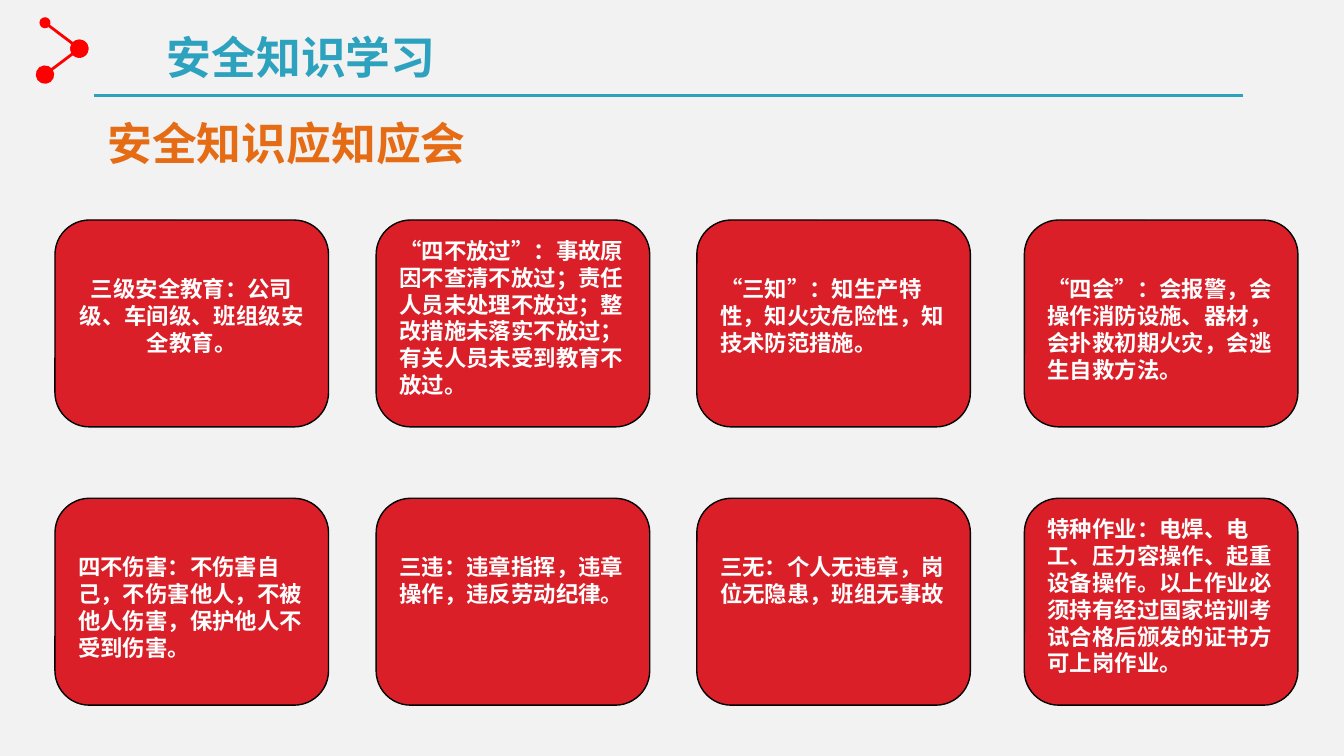
from dataclasses import dataclass

from lxml import etree
from pptx import Presentation
from pptx.dml.color import RGBColor
from pptx.enum.lang import MSO_LANGUAGE_ID
from pptx.enum.shapes import MSO_CONNECTOR, MSO_SHAPE
from pptx.enum.text import MSO_ANCHOR, PP_ALIGN
from pptx.oxml.ns import qn
from pptx.util import Cm, Pt

STRAIGHT = MSO_CONNECTOR.STRAIGHT
ROUNDED = MSO_SHAPE.ROUNDED_RECTANGLE
TOP, MIDDLE = MSO_ANCHOR.TOP, MSO_ANCHOR.MIDDLE
LEFT, CENTER, RIGHT = PP_ALIGN.LEFT, PP_ALIGN.CENTER, PP_ALIGN.RIGHT
CHINESE = MSO_LANGUAGE_ID.SIMPLIFIED_CHINESE


@dataclass(frozen=True)
class Theme:
    font: str = "Times New Roman"
    background: RGBColor = RGBColor(0xF2, 0xF2, 0xF2)
    teal: RGBColor = RGBColor(0x2D, 0xA2, 0xBF)
    orange: RGBColor = RGBColor(0xE5, 0x6B, 0x15)
    mark: RGBColor = RGBColor(0xFF, 0x00, 0x00)
    card: RGBColor = RGBColor(0xDA, 0x1F, 0x28)
    outline: RGBColor = RGBColor(0x00, 0x00, 0x00)
    card_text: RGBColor = RGBColor(0xFF, 0xFF, 0xFF)
    heading_size: Pt = Pt(24)
    card_size: Pt = Pt(12)
    rule_width: Pt = Pt(1.5)
    outline_width: Pt = Pt(0.75)


theme = Theme()


def write_text(shape, text, size, color, alignment, anchor):
    frame = shape.text_frame
    frame.word_wrap = True
    frame.vertical_anchor = anchor
    frame.text = text
    para = frame.paragraphs[0]
    para.alignment = alignment
    para._p.get_or_add_pPr().set("hangingPunct", "0")
    font = para.runs[0].font
    font.name = theme.font
    font.size = size
    font.bold = True
    font.color.rgb = color
    font.language_id = CHINESE


def draw_line(page, ends, color, dots=()):
    line = page.shapes.add_connector(STRAIGHT, *[Cm(value) for value in ends])
    line.line.color.rgb = color
    line.line.width = theme.rule_width
    outline = line.line._get_or_add_ln()
    for end, dot_size in dots:
        etree.SubElement(outline, qn(f"a:{end}"), type="oval", w=dot_size, len=dot_size)
    etree.SubElement(line._element.spPr, qn("a:effectLst"))


deck = Presentation()
deck.slide_width, deck.slide_height = Cm(25.4), Cm(14.29)
page = deck.slides.add_slide(deck.slide_layouts[6])
page.background.fill.solid()
page.background.fill.fore_color.rgb = theme.background

draw_line(page, (23.5, 1.81, 1.78, 1.81), theme.teal)
draw_line(page, (0.85, 0.43, 1.5, 0.92), theme.mark, [("headEnd", "med"), ("tailEnd", "lg")])
draw_line(page, (1.5, 0.92, 0.85, 1.41), theme.mark, [("headEnd", "lg"), ("tailEnd", "lg")])

headings = [
    ("安全知识学习", (2.12, 0.43, 7.14, 1.27), theme.teal, CENTER, TOP),
    ("安全知识应知应会", (0.95, 1.61, 8.1, 2.16), theme.orange, RIGHT, MIDDLE),
]
for text, bounds, color, alignment, anchor in headings:
    box = page.shapes.add_textbox(*[Cm(value) for value in bounds])
    write_text(box, text, theme.heading_size, color, alignment, anchor)

card_width, card_height = Cm(5.17), Cm(3.91)
column_lefts = [1.04, 7.11, 13.17, 19.36]
row_tops = [4.16, 9.42]
high_inset, low_inset = Cm(0.13), Cm(0.85)
card_rows = [
    [
        ("三级安全教育：公司级、车间级、班组级安全教育。", CENTER, low_inset),
        ("“四不放过”：事故原因不查清不放过；责任人员未处理不放过；整改措施未落实不放过；有关人员未受到教育不放过。", LEFT, high_inset),
        ("“三知”：知生产特性，知火灾危险性，知技术防范措施。", LEFT, low_inset),
        ("“四会”：会报警，会操作消防设施、器材，会扑救初期火灾，会逃生自救方法。", LEFT, low_inset),
    ],
    [
        ("四不伤害：不伤害自己，不伤害他人，不被他人伤害，保护他人不受到伤害。", LEFT, low_inset),
        ("三违：违章指挥，违章操作，违反劳动纪律。", LEFT, low_inset),
        ("三无：个人无违章，岗位无隐患，班组无事故", LEFT, low_inset),
        ("特种作业：电焊、电工、压力容操作、起重设备操作。以上作业必须持有经过国家培训考试合格后颁发的证书方可上岗作业。", LEFT, high_inset),
    ],
]
for top, cards in zip(row_tops, card_rows):
    for left, (text, alignment, inset) in zip(column_lefts, cards):
        card = page.shapes.add_shape(ROUNDED, Cm(left), Cm(top), card_width, card_height)
        card.shadow.inherit = False
        card.fill.solid()
        card.fill.fore_color.rgb = theme.card
        card.line.color.rgb = theme.outline
        card.line.width = theme.outline_width
        card.text_frame.margin_top = inset
        write_text(card, text, theme.card_size, theme.card_text, alignment, TOP)

deck.save("out.pptx")
